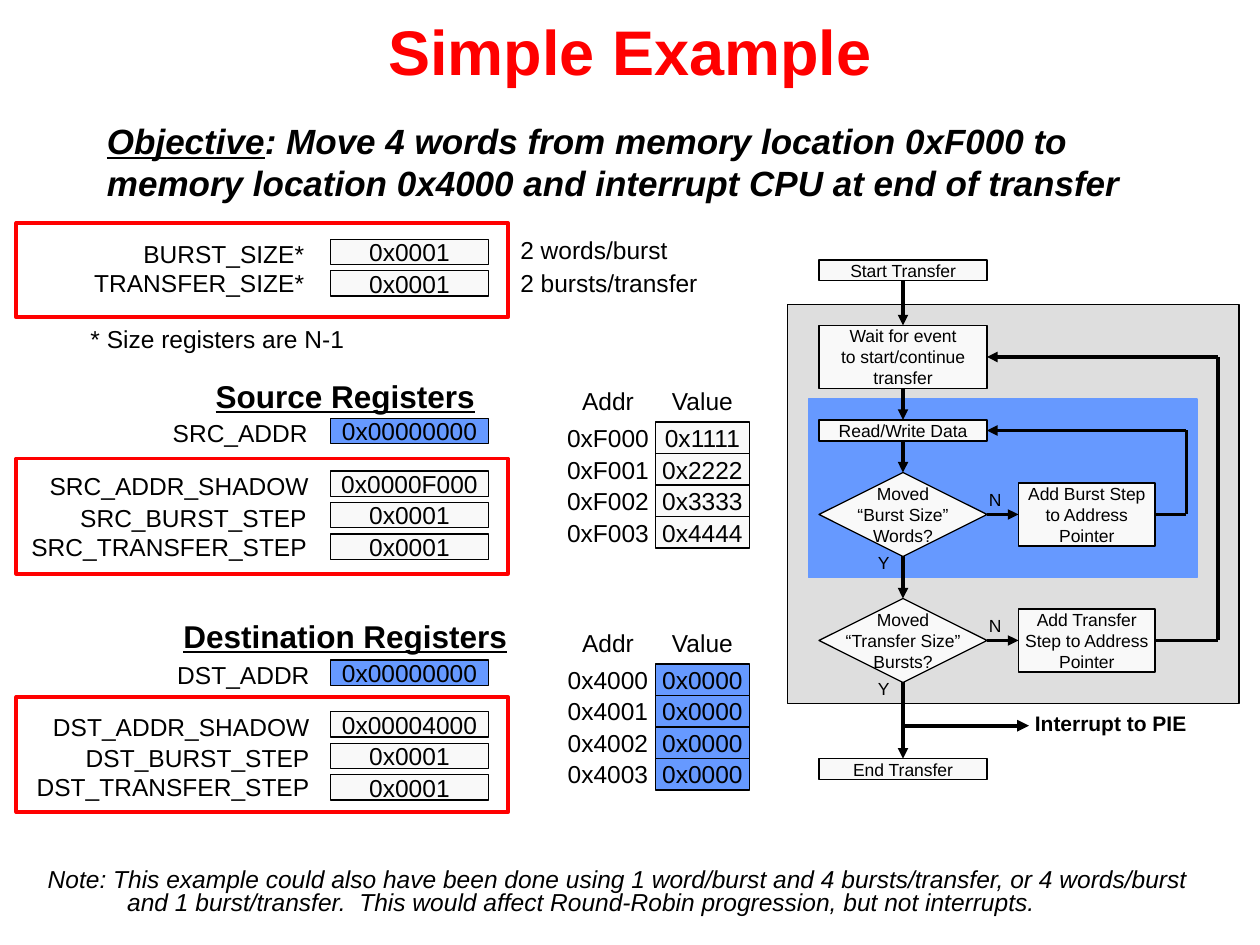
from dataclasses import dataclass
from typing import NamedTuple

import pptx
import pptx.dml.color
import pptx.enum.shapes
import pptx.enum.text
import pptx.util
from lxml import etree

Pt = pptx.util.Pt
Align = pptx.enum.text.PP_ALIGN
Anchor = pptx.enum.text.MSO_ANCHOR
Kind = pptx.enum.shapes.MSO_SHAPE
TOP, LEFT, BOTTOM, RIGHT = range(4)
DRAWING = "http://schemas.openxmlformats.org/drawingml/2006/main"


@dataclass(frozen=True)
class Theme:
    font: str = "Arial"
    red: str = "FF0000"
    black: str = "000000"
    blue: str = "6699FF"
    pale: str = "F9F9F9"
    grey: str = "DEDEDE"
    title: int = 36
    objective: int = 20
    heading: int = 18
    body: int = 14
    exit_label: int = 12
    flow: int = 10
    hairline: float = 0.75
    frame: float = 2.25
    arrow: float = 2


THEME = Theme()


class Box(NamedTuple):
    left: float
    top: float
    width: float
    height: float


class Site(NamedTuple):
    shape: object
    side: int


class Register(NamedTuple):
    name: str
    value: str
    label_right: float
    label_top: float
    cell_top: float
    fill: str = THEME.pale


class Memory(NamedTuple):
    top: float
    addresses: list
    values: list
    fill: str


class Step(NamedTuple):
    key: str
    text: str
    box: Box
    kind: int = Kind.RECTANGLE


def color(code: str):
    return pptx.dml.color.RGBColor.from_string(code)


def write(shape, text: str, *, size=THEME.body, ink=THEME.black, bold=False, italic=False,
          underline=False, lead="", align=Align.LEFT, anchor=Anchor.TOP, wrap=True,
          margin=None, spacing=None, hanging=0) -> None:
    frame = shape.text_frame
    frame.word_wrap = wrap
    frame.vertical_anchor = anchor
    if margin is not None:
        frame.margin_left = frame.margin_right = Pt(margin)
        frame.margin_top = frame.margin_bottom = Pt(margin)
    for index, line in enumerate(text.split("\n")):
        para = frame.add_paragraph() if index else frame.paragraphs[0]
        para.alignment = align
        if hanging:
            properties = para._p.get_or_add_pPr()
            properties.set("marL", str(Pt(hanging)))
            properties.set("indent", str(-Pt(hanging)))
        if spacing:
            para.line_spacing = spacing
        pieces = [(lead, True)] if lead and not index else []
        for words, lined in pieces + [(line, underline)]:
            span = para.add_run()
            span.text = words
            font = span.font
            font.name, font.size = THEME.font, Pt(size)
            font.bold, font.italic, font.underline = bold, italic, lined
            font.color.rgb = color(ink)


def add_label(page, text: str, box: Box, **style):
    label = page.shapes.add_textbox(*map(Pt, box))
    write(label, text, **style)
    return label


def add_block(page, box: Box, *, fill=None, line=THEME.black, weight=THEME.hairline,
              kind=Kind.RECTANGLE, text="", size=THEME.body):
    block = page.shapes.add_shape(kind, *map(Pt, box))
    block.shadow.inherit = False
    if fill:
        block.fill.solid()
        block.fill.fore_color.rgb = color(fill)
    else:
        block.fill.background()
    block.line.color.rgb = color(line)
    block.line.width = Pt(weight)
    if text:
        write(block, text, size=size, align=Align.CENTER, anchor=Anchor.MIDDLE, wrap=False, margin=0)
    return block


def add_line(page, start, end, *, arrow=True, weight=THEME.arrow):
    fixed = [(0, 0) if isinstance(point, Site) else point for point in (start, end)]
    line = page.shapes.add_connector(pptx.enum.shapes.MSO_CONNECTOR.STRAIGHT,
                                     *(Pt(value) for point in fixed for value in point))
    if isinstance(start, Site):
        line.begin_connect(*start)
    if isinstance(end, Site):
        line.end_connect(*end)
    line.line.color.rgb = color(THEME.black)
    line.line.width = Pt(weight)
    if arrow:
        etree.SubElement(line.line._get_or_add_ln(), f"{{{DRAWING}}}tailEnd", type="triangle")
    etree.SubElement(line._element.spPr, f"{{{DRAWING}}}effectLst")


def add_register(page, register: Register) -> None:
    add_label(page, register.name, Box(register.label_right - 178, register.label_top, 178, 24),
              align=Align.RIGHT)
    add_block(page, Box(189, register.cell_top, 90, 14.4), fill=register.fill, text=register.value)


def add_memory(page, memory: Memory) -> None:
    for heading, left in (("Addr", 320.4), ("Value", 374.4)):
        add_label(page, heading, Box(left, memory.top - 24, 54, 24), align=Align.CENTER)
    for row, (address, value) in enumerate(zip(memory.addresses, memory.values)):
        top = memory.top + 18 * row
        add_label(page, address, Box(320.4, top, 54, 18), align=Align.CENTER,
                  anchor=Anchor.MIDDLE, wrap=False, margin=0)
        add_block(page, Box(374.4, top, 54, 18), fill=memory.fill, text=value)


def add_loop(page, source, target, lane: float, bottom: float, top: float) -> None:
    add_line(page, Site(source, RIGHT), (lane, bottom), arrow=False)
    add_line(page, (lane, bottom), (lane, top), arrow=False)
    add_line(page, (lane, top), Site(target, RIGHT))


REGISTERS = [
    Register("BURST_SIZE*", "0x0001", 181, 133.2, 136.8),
    Register("TRANSFER_SIZE*", "0x0001", 181, 149.8, 154.8),
    Register("SRC_ADDR", "0x00000000", 183, 235.4, 239, THEME.blue),
    Register("SRC_ADDR_SHADOW", "0x0000F000", 183.6, 265.7, 269.2),
    Register("SRC_BURST_STEP", "0x0001", 182.4, 283.7, 287.2),
    Register("SRC_TRANSFER_STEP", "0x0001", 182.6, 300.2, 305.2),
    Register("DST_ADDR", "0x00000000", 184, 373.7, 377.2, THEME.blue),
    Register("DST_ADDR_SHADOW", "0x00004000", 184, 403.2, 406.8),
    Register("DST_BURST_STEP", "0x0001", 184, 421.2, 424.8),
    Register("DST_TRANSFER_STEP", "0x0001", 184, 437.8, 442.8),
]
MEMORIES = [
    Memory(241.2, [f"0xF00{n}" for n in range(4)], [f"0x{n * 1111}" for n in range(1, 5)], THEME.pale),
    Memory(379.4, [f"0x400{n}" for n in range(4)], ["0x0000"] * 4, THEME.blue),
]
STEPS = [
    Step("start", "Start Transfer", Box(468, 148.5, 96, 12)),
    Step("wait", "Wait for event\nto start/continue\ntransfer", Box(468, 186, 96, 36)),
    Step("move", "Read/Write Data", Box(468, 240, 96, 12)),
    Step("burst", "Moved\n“Burst Size”\nWords?", Box(468, 270, 96, 48), Kind.DIAMOND),
    Step("transfer", "Moved\n“Transfer Size”\nBursts?", Box(468, 342, 96, 48), Kind.DIAMOND),
    Step("end", "End Transfer", Box(468, 433.5, 96, 12)),
    Step("add_burst", "Add Burst Step\nto Address\nPointer", Box(582, 276, 78, 36)),
    Step("add_transfer", "Add Transfer\nStep to Address\nPointer", Box(582, 348, 78, 36)),
]
MAIN_FLOW = ["start", "wait", "move", "burst", "transfer", "end"]


def add_flowchart(page) -> None:
    add_block(page, Box(450, 174, 258, 228), fill=THEME.grey)
    add_block(page, Box(462, 228, 222, 102), fill=THEME.blue, line=THEME.blue)
    steps = {step.key: add_block(page, step.box, fill=THEME.pale, kind=step.kind, text=step.text,
                                 size=THEME.flow) for step in STEPS}
    for upper, lower in zip(MAIN_FLOW, MAIN_FLOW[1:]):
        add_line(page, Site(steps[upper], BOTTOM), Site(steps[lower], TOP))
    for test, top in (("burst", 276), ("transfer", 348)):
        add_line(page, Site(steps[test], RIGHT), Site(steps[f"add_{test}"], LEFT))
        add_label(page, "N", Box(558, top, 21.6, 19.4), size=THEME.flow, wrap=False)
        add_label(page, "Y", Box(494.6, top + 36, 21, 19.4), size=THEME.flow, wrap=False)
    add_loop(page, steps["add_burst"], steps["move"], 678, 294, 246)
    add_loop(page, steps["add_transfer"], steps["wait"], 696, 366, 204)
    add_line(page, (516, 414.7), (588, 414.7), weight=THEME.frame)
    add_label(page, "Interrupt to PIE", Box(584, 405.4, 101.4, 18.7), size=THEME.exit_label,
              bold=True, align=Align.CENTER, wrap=False, spacing=0.8)


def main() -> None:
    deck = pptx.Presentation()
    deck.slide_width, deck.slide_height = Pt(720), Pt(540)
    page = deck.slides.add_slide(deck.slide_layouts[5])
    title = page.shapes.title
    title.left, title.top, title.width, title.height = map(Pt, Box(0, 0, 720, 58))
    title.text_frame.auto_size = pptx.enum.text.MSO_AUTO_SIZE.NONE
    write(title, "Simple Example", size=THEME.title, ink=THEME.red, bold=True,
          align=Align.CENTER, anchor=Anchor.MIDDLE)
    add_label(page, ": Move 4 words from memory location 0xF000 to memory location 0x4000 "
              "and interrupt CPU at end of transfer", Box(54, 64.8, 610, 55.4),
              lead="Objective", size=THEME.objective, bold=True, italic=True)
    add_flowchart(page)
    for register in REGISTERS:
        add_register(page, register)
    for memory in MEMORIES:
        add_memory(page, memory)
    for heading, top in (("Source Registers", 211.7), ("Destination Registers", 349.2)):
        add_label(page, heading, Box(92.2, top, 210.2, 28.8), size=THEME.heading, bold=True,
                  underline=True, align=Align.CENTER)
    for remark, left, top, width in (("2 words/burst", 290.2, 131, 123),
                                     ("2 bursts/transfer", 290.2, 149.8, 123),
                                     ("* Size registers are N-1", 44.6, 181.4, 181.4)):
        add_label(page, remark, Box(left, top, width, 24))
    for top, height in ((127.4, 54), (262, 66), (398.2, 66)):
        add_block(page, Box(9.4, top, 280.8, height), line=THEME.red, weight=THEME.frame)
    add_label(page, "Note: This example could also have been done using 1 word/burst and "
              "4 bursts/transfer, or 4 words/burst and 1 burst/transfer.  This would affect "
              "Round-Robin progression, but not interrupts.", Box(20.2, 493.2, 676.8, 33.8),
              italic=True, spacing=0.8, hanging=45.4)
    deck.save("out.pptx")


if __name__ == "__main__":
    main()
